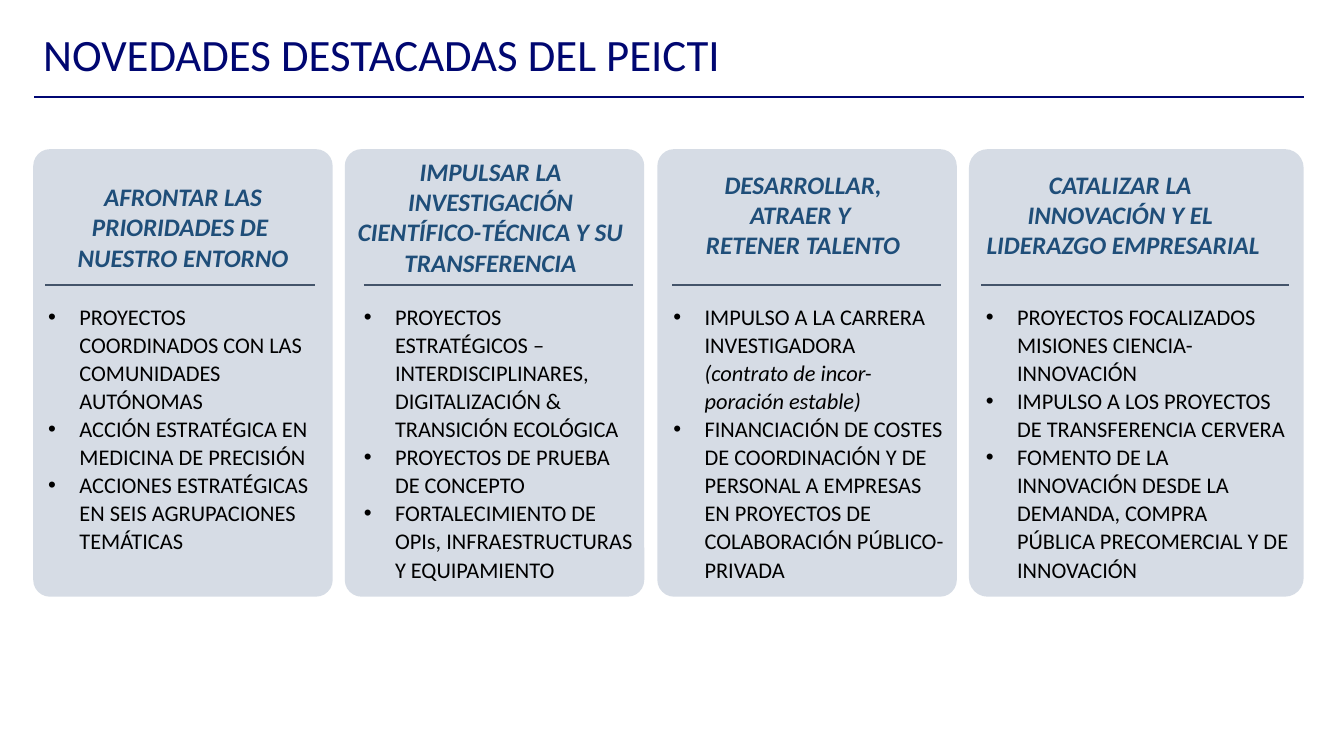
from lxml import etree
from pptx import Presentation
from pptx.dml.color import RGBColor
from pptx.enum.shapes import MSO_CONNECTOR, MSO_SHAPE
from pptx.enum.text import MSO_AUTO_SIZE, PP_ALIGN
from pptx.oxml.ns import qn
from pptx.util import Pt

ROUNDED = MSO_SHAPE.ROUNDED_RECTANGLE
STRAIGHT = MSO_CONNECTOR.STRAIGHT
GROW = MSO_AUTO_SIZE.SHAPE_TO_FIT_TEXT
LEFT, CENTER = PP_ALIGN.LEFT, PP_ALIGN.CENTER

EMU_PER_PX = 9144
FONT = "Calibri"
COLORS = {
    "title": "000771",
    "title_rule": "000773",
    "panel": "D6DCE5",
    "heading": "1F4E79",
    "heading_rule": "44546A",
    "body": "000000",
}
FIRST_LEFT, PITCH = 33, 309.4
PANEL_TOP, PANEL_HEIGHT = 148, 444
RULE_Y, BODY_TOP = 283, 295

PILLARS = [
    {
        "width": 297,
        "heading": "AFRONTAR LAS PRIORIDADES DE \nNUESTRO ENTORNO",
        "heading_box": (33, 175, 297, 101),
        "rule": (45, 312),
        "body_box": (38, BODY_TOP, 291, 261),
        "points": [
            ["PROYECTOS COORDINADOS CON LAS COMUNIDADES AUTÓNOMAS"],
            ["ACCIÓN ESTRATÉGICA EN MEDICINA DE PRECISIÓN"],
            ["ACCIONES ESTRATÉGICAS EN SEIS AGRUPACIONES TEMÁTICAS"],
        ],
    },
    {
        "width": 297,
        "heading": "IMPULSAR LA INVESTIGACIÓN CIENTÍFICO-TÉCNICA Y SU TRANSFERENCIA",
        "heading_box": (342, 150, 289, 131),
        "rule": (361, 628),
        "body_box": (351, BODY_TOP, 289, 289),
        "points": [
            ["PROYECTOS ESTRATÉGICOS – INTERDISCIPLINARES, DIGITALIZACIÓN & TRANSICIÓN ECOLÓGICA"],
            ["PROYECTOS DE PRUEBA DE CONCEPTO"],
            ["FORTALECIMIENTO DE OPIs, INFRAESTRUCTURAS Y EQUIPAMIENTO"],
        ],
    },
    {
        "width": 297,
        "heading": "DESARROLLAR,\nATRAER Y \nRETENER TALENTO",
        "heading_box": (652, 163, 289, 101),
        "rule": (667, 933),
        "body_box": (658, BODY_TOP, 289, 289),
        "points": [
            ["IMPULSO A LA CARRERA INVESTIGADORA \n", "(contrato de incor-poración estable)"],
            ["FINANCIACIÓN DE COSTES DE COORDINACIÓN Y DE PERSONAL A EMPRESAS "
             "EN PROYECTOS DE COLABORACIÓN PÚBLICO-PRIVADA"],
        ],
    },
    {
        "width": 332,
        "heading": "CATALIZAR LA \nINNOVACIÓN Y EL \nLIDERAZGO EMPRESARIAL",
        "heading_box": (961, 163, 306, 101),
        "rule": (973, 1278),
        "body_box": (968, BODY_TOP, 320, 289),
        "points": [
            ["PROYECTOS FOCALIZADOS MISIONES CIENCIA-INNOVACIÓN"],
            ["IMPULSO A LOS PROYECTOS DE TRANSFERENCIA CERVERA"],
            ["FOMENTO DE LA INNOVACIÓN DESDE LA DEMANDA, COMPRA PÚBLICA PRECOMERCIAL Y DE INNOVACIÓN"],
        ],
    },
]


def px(length):
    return round(length * EMU_PER_PX)


def rgb(name):
    return RGBColor.from_string(COLORS[name])


def write(paragraph, text, *, size, color, bold=False, italic=False):
    for index, line in enumerate(text.split("\n")):
        if index:
            paragraph.add_line_break()
        if line:
            run = paragraph.add_run()
            run.text = line
            run.font.name = FONT
            run.font.size = Pt(size)
            run.font.bold = bold
            run.font.italic = italic
            run.font.color.rgb = rgb(color)


class PillarSlide:
    """Draws panels, rules and text on one slide in a shared style."""

    def __init__(self, slide):
        self.shapes = slide.shapes

    def panel(self, left, width):
        panel = self.shapes.add_shape(ROUNDED, px(left), px(PANEL_TOP), px(width), px(PANEL_HEIGHT))
        panel.adjustments[0] = 0.056
        panel.shadow.inherit = False
        panel.fill.solid()
        panel.fill.fore_color.rgb = rgb("panel")
        panel.line.fill.background()

    def rule(self, start, end, y, color, weight):
        rule = self.shapes.add_connector(STRAIGHT, px(start), px(y), px(end), px(y))
        rule.line.color.rgb = rgb(color)
        rule.line.width = Pt(weight)
        etree.SubElement(rule._element.spPr, qn("a:effectLst"))

    def frame(self, box):
        frame = self.shapes.add_textbox(*map(px, box)).text_frame
        frame.word_wrap = True
        frame.auto_size = GROW
        return frame

    def label(self, box, text, align=LEFT, **style):
        paragraph = self.frame(box).paragraphs[0]
        paragraph.alignment = align
        write(paragraph, text, **style)

    def bullets(self, box, points):
        frame = self.frame(box)
        for index, (plain, *emphasis) in enumerate(points):
            paragraph = frame.add_paragraph() if index else frame.paragraphs[0]
            paragraph.line_spacing = Pt(20)
            properties = paragraph._p.get_or_add_pPr()
            properties.set("marL", str(px(31)))
            properties.set("indent", str(px(-31)))
            etree.SubElement(properties, qn("a:buFont"), typeface="Arial")
            etree.SubElement(properties, qn("a:buChar"), char="•")
            write(paragraph, plain, size=16, color="body")
            for text in emphasis:
                write(paragraph, text, size=16, color="body", italic=True)


def main():
    presentation = Presentation()
    presentation.slide_width = px(1333)
    presentation.slide_height = px(750)
    page = PillarSlide(presentation.slides.add_slide(presentation.slide_layouts[6]))

    page.rule(34, 1293, 96, "title_rule", 1.5)
    page.label((33, 22, 1049, 64), "NOVEDADES DESTACADAS DEL PEICTI", size=32, color="title")

    for index, pillar in enumerate(PILLARS):
        page.panel(round(FIRST_LEFT + index * PITCH), pillar["width"])
        page.label(pillar["heading_box"], pillar["heading"], CENTER,
                   size=18, color="heading", bold=True, italic=True)
        page.bullets(pillar["body_box"], pillar["points"])
        page.rule(*pillar["rule"], RULE_Y, "heading_rule", 1.75)

    presentation.save("out.pptx")


if __name__ == "__main__":
    main()
